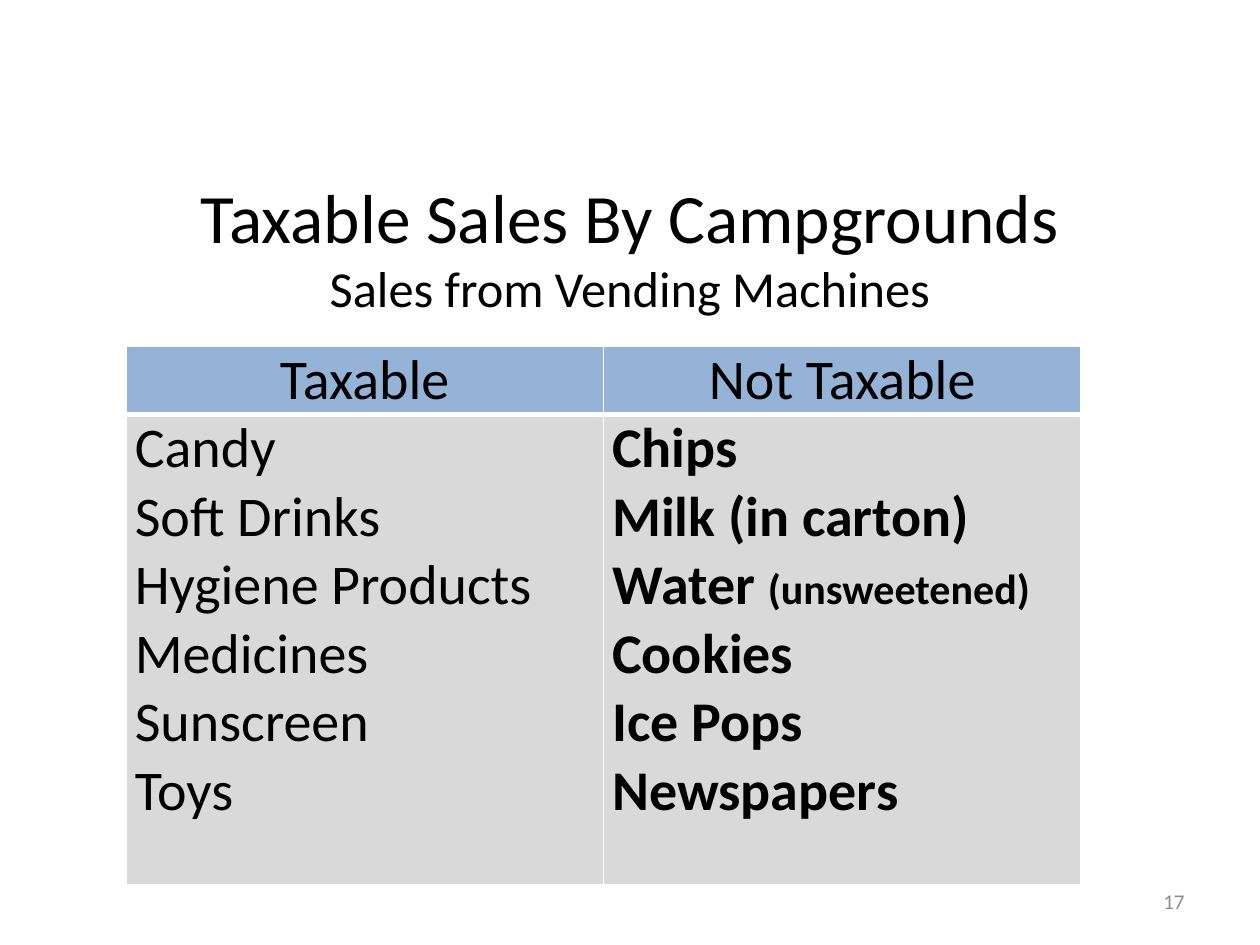
from lxml.etree import SubElement
from pptx import Presentation
from pptx.dml.color import RGBColor
from pptx.enum.text import MSO_ANCHOR, PP_ALIGN
from pptx.oxml.ns import qn
from pptx.util import Inches, Pt

FONT = "Calibri"
BLACK = RGBColor(0x00, 0x00, 0x00)
GRAY = RGBColor(0x8C, 0x8C, 0x8C)
HEADER_BLUE = RGBColor(0x95, 0xB3, 0xD7)
BODY_GRAY = RGBColor(0xD9, 0xD9, 0xD9)
WHITE = RGBColor(0xFF, 0xFF, 0xFF)

# Each column: heading, items, bold items
COLUMNS = [
    ("Taxable",
     ["Candy", "Soft Drinks", "Hygiene Products", "Medicines", "Sunscreen",
      "Toys"], False),
    ("Not Taxable",
     ["Chips", "Milk (in carton)", "Water (unsweetened)", "Cookies",
      "Ice Pops", "Newspapers"], True),
]
SMALL_NOTE = "(unsweetened)"


def style_run(run, size, color=BLACK, bold=False):
    run.font.name = FONT
    run.font.size = Pt(size)
    run.font.color.rgb = color
    run.font.bold = bold


def add_text(slide, left, top, width, height, lines, align, color=BLACK):
    """Add a middle-anchored text box; lines are (text, size) pairs."""
    frame = slide.shapes.add_textbox(
        Inches(left), Inches(top), Inches(width), Inches(height)).text_frame
    frame.word_wrap = True
    frame.vertical_anchor = MSO_ANCHOR.MIDDLE
    frame.margin_top = frame.margin_bottom = 0
    frame.text = "\n".join(text for text, _ in lines)
    for paragraph, (_, size) in zip(frame.paragraphs, lines):
        paragraph.alignment = align
        style_run(paragraph.runs[0], size, color)


def set_borders(cell, bottom_width):
    """Draw white borders; they must precede the cell's fill in the XML."""
    properties = cell._tc.get_or_add_tcPr()
    for side in ("L", "R", "T", "B"):
        width = bottom_width if side == "B" else 1
        line = SubElement(properties, qn(f"a:ln{side}"), w=str(Pt(width)))
        fill = SubElement(line, qn("a:solidFill"))
        SubElement(fill, qn("a:srgbClr"), val=str(WHITE))


def fill_cell(cell, lines, color, align, bold=False, bottom_width=1):
    set_borders(cell, bottom_width)
    cell.fill.solid()
    cell.fill.fore_color.rgb = color
    cell.margin_left = cell.margin_right = Inches(0.07)
    cell.margin_top = cell.margin_bottom = 0
    cell.text_frame.text = "\n".join(lines)
    for paragraph in cell.text_frame.paragraphs:
        paragraph.alignment = align
        item = paragraph.runs[0]
        style_run(item, 32, bold=bold)
        if item.text.endswith(SMALL_NOTE):
            item.text = item.text.removesuffix(SMALL_NOTE)
            note = paragraph.add_run()
            note.text = SMALL_NOTE
            style_run(note, 24, bold=bold)


def add_sales_table(slide):
    table = slide.shapes.add_table(
        2, len(COLUMNS), Inches(1), Inches(2.75),
        Inches(7.58), Inches(4.27)).table
    table.rows[0].height = Inches(0.54)
    table.rows[1].height = Inches(3.73)
    for index, (heading, items, bold) in enumerate(COLUMNS):
        fill_cell(table.cell(0, index), [heading], HEADER_BLUE,
                  PP_ALIGN.CENTER, bottom_width=3)
        fill_cell(table.cell(1, index), items, BODY_GRAY, PP_ALIGN.LEFT, bold)


def main():
    presentation = Presentation()
    presentation.slide_width = Inches(10)
    presentation.slide_height = Inches(7.5)
    slide = presentation.slides.add_slide(presentation.slide_layouts[6])

    # Title and subtitle
    add_text(slide, 0.5, 1.35, 9, 1.2,
             [("Taxable Sales By Campgrounds", 39.6),
              ("Sales from Vending Machines", 28.8)], PP_ALIGN.CENTER)

    # Taxable and not taxable items
    add_sales_table(slide)

    # Page number
    add_text(slide, 7.17, 6.95, 2.33, 0.4, [("17", 12)], PP_ALIGN.RIGHT, GRAY)

    presentation.save("out.pptx")


if __name__ == "__main__":
    main()
